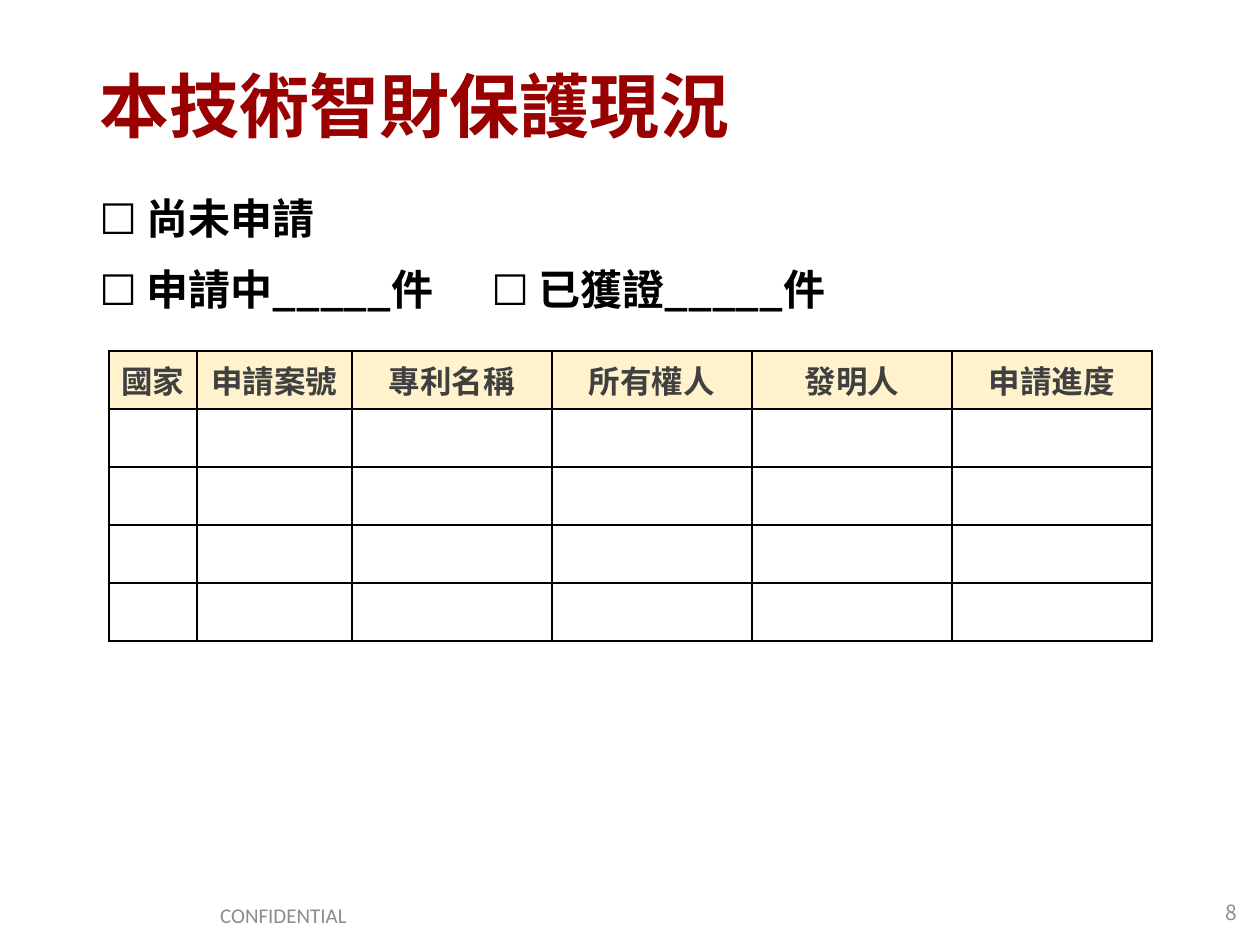
from lxml.etree import SubElement
from pptx import Presentation
from pptx.dml.color import RGBColor
from pptx.enum.text import MSO_ANCHOR, PP_ALIGN
from pptx.oxml import parse_xml
from pptx.oxml.ns import nsdecls, qn
from pptx.util import Emu, Pt

SCALE = 914400 / 126
CJK = "Noto Sans CJK SC"
COLORS = {
    "title": "990000",
    "body": "000000",
    "header": "404040",
    "header_fill": "FFF2CC",
    "border": "000000",
    "footer": "8C8C8C",
}
HEADERS = ["國家", "申請案號", "專利名稱", "所有權人", "發明人", "申請進度"]
COL_WIDTHS = [88, 155, 200, 200, 200, 200]
ROW_COUNT = 5
ROW_HEIGHT = 58
CELL_MARGIN = 8
STATUS_LINES = ["☐ 尚未申請", "☐ 申請中_____件\t☐ 已獲證_____件"]


def px(n):
    return Emu(round(n * SCALE))


def rgb(name):
    return RGBColor.from_string(COLORS[name])


def format_text(tf, size, color, bold=False, font=CJK, align=PP_ALIGN.LEFT):
    for p in tf.paragraphs:
        p.alignment = align
        for r in p.runs:
            r.font.size = Pt(size)
            r.font.bold = bold
            r.font.name = font
            r.font.color.rgb = rgb(color)
            SubElement(r.font._element, qn("a:ea")).set("typeface", font)


def add_title(s, text):
    title = s.shapes.title
    title.left, title.top, title.width, title.height = map(px, (87, 51, 1086, 118))
    tf = title.text_frame
    tf.text = text
    tf.vertical_anchor = MSO_ANCHOR.MIDDLE
    tf.paragraphs[0].line_spacing = 0.9
    format_text(tf, 40, "title", bold=True)


def add_text(s, box, text, anchor=MSO_ANCHOR.MIDDLE):
    tf = s.shapes.add_textbox(*map(px, box)).text_frame
    tf.word_wrap = True
    tf.vertical_anchor = anchor
    tf.text = text
    return tf


def add_status(s):
    tf = add_text(s, (87, 186, 1086, 664), "\n".join(STATUS_LINES), MSO_ANCHOR.TOP)
    for i, p in enumerate(tf.paragraphs):
        p.line_spacing = 1.0
        p.space_before = Pt(12 if i else 0)
    tabs = SubElement(tf.paragraphs[1]._p.get_or_add_pPr(), qn("a:tabLst"))
    SubElement(tabs, qn("a:tab"), pos=str(px(392)), algn="l")
    format_text(tf, 24, "body", bold=True)


def set_borders(cell):
    tcPr = cell._tc.get_or_add_tcPr()
    for i, side in enumerate(("lnL", "lnR", "lnT", "lnB")):
        tcPr.insert(i, parse_xml(
            f'<a:{side} {nsdecls("a")} w="{Pt(1)}"><a:solidFill>'
            f'<a:srgbClr val="{COLORS["border"]}"/></a:solidFill></a:{side}>'))


def add_patent_table(s):
    size = (sum(COL_WIDTHS), ROW_COUNT * ROW_HEIGHT)
    table = s.shapes.add_table(
        ROW_COUNT, len(HEADERS), px(109), px(351), *map(px, size)).table
    table.horz_banding = False
    for col, width in zip(table.columns, COL_WIDTHS):
        col.width = px(width)
    for row in table.rows:
        row.height = px(ROW_HEIGHT)
    for cell in table.iter_cells():
        cell.margin_left = cell.margin_right = px(CELL_MARGIN)
        cell.fill.background()
        set_borders(cell)
    for cell, text in zip(table.rows[0].cells, HEADERS):
        cell.text = text
        cell.fill.solid()
        cell.fill.fore_color.rgb = rgb("header_fill")
        format_text(cell.text_frame, 18, "header", bold=True, align=PP_ALIGN.CENTER)


def add_footer(s):
    number = add_text(s, (1192, 887, 58, 50), "8")
    format_text(number, 12, "footer", align=PP_ALIGN.RIGHT)
    label = add_text(s, (116, 890, 335, 50), "CONFIDENTIAL")
    format_text(label, 12, "footer", font="Calibri", align=PP_ALIGN.CENTER)


def main():
    prs = Presentation()
    prs.slide_width, prs.slide_height = px(1260), px(945)
    s = prs.slides.add_slide(prs.slide_layouts[5])
    add_title(s, "本技術智財保護現況")
    add_status(s)
    add_patent_table(s)
    add_footer(s)
    prs.save("out.pptx")


if __name__ == "__main__":
    main()
